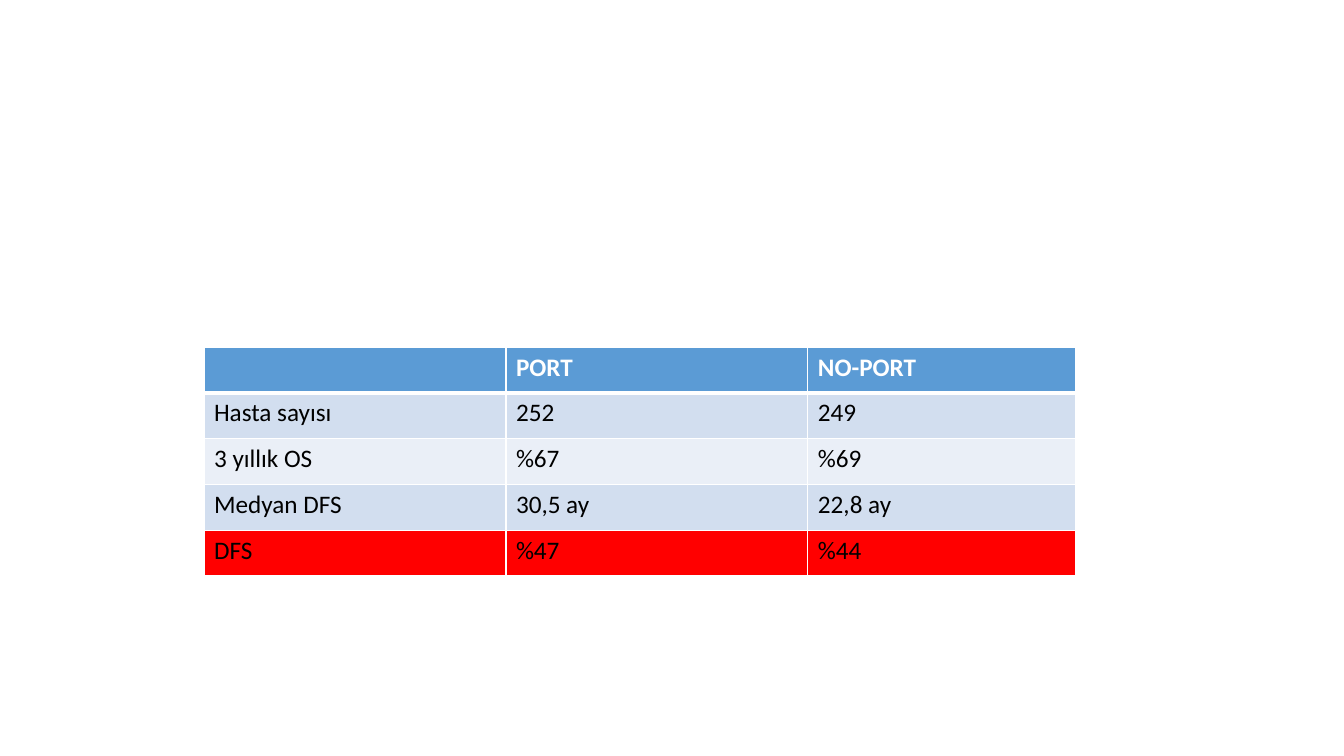
from dataclasses import dataclass

from lxml.etree import SubElement
from pptx import Presentation
from pptx.dml.color import RGBColor as Rgb
from pptx.oxml.ns import qn
from pptx.table import _Cell as Cell
from pptx.util import Emu, Pt

SCALE = 914400 / 100.8
WHITE, BLACK = "FFFFFF", "000000"
BLUE, PALE, LIGHT, RED = "5B9BD5", "D2DEEF", "EAEFF7", "FF0000"


@dataclass
class Row:
    texts: tuple[str, ...]
    fill: str
    ink: str = BLACK
    bold: bool = False
    top: int = 1
    base: int = 1


ROWS = [
    Row(("", "PORT", "NO-PORT"), BLUE, WHITE, True, base=3),
    Row(("Hasta sayısı", "252", "249"), PALE, top=3),
    Row(("3 yıllık OS", "%67", "%69"), LIGHT),
    Row(("Medyan DFS", "30,5 ay", "22,8 ay"), PALE),
    Row(("DFS", "%47", "%44"), RED),
]
WIDTHS = (302, 302, 268)


def px(size: int) -> Emu:
    return Emu(round(size * SCALE))


def color(code: str) -> Rgb:
    return Rgb.from_string(code)


def add_edge(cell: Cell, tag: str, width: int) -> None:
    props = cell._tc.get_or_add_tcPr()
    line = SubElement(props, qn(tag), w=str(Pt(width)))
    fill = SubElement(line, qn("a:solidFill"))
    SubElement(fill, qn("a:srgbClr"), val=WHITE)


def fill_cell(cell: Cell, text: str, row: Row) -> None:
    """Borders come first, as the schema puts them before the fill."""
    edges = {"a:lnL": 1, "a:lnR": 1, "a:lnT": row.top, "a:lnB": row.base}
    for tag, width in edges.items():
        add_edge(cell, tag, width)
    cell.fill.solid()
    cell.fill.fore_color.rgb = color(row.fill)
    if text:
        run = cell.text_frame.paragraphs[0].add_run()
        run.text = text
        font = run.font
        font.name, font.size, font.bold = "Calibri", Pt(18), row.bold
        font.color.rgb = color(row.ink)


def main() -> None:
    deck = Presentation()
    deck.slide_width, deck.slide_height = px(1344), px(756)
    slide = deck.slides.add_slide(deck.slide_layouts[6])
    table = slide.shapes.add_table(
        len(ROWS), len(WIDTHS), px(204), px(347), px(sum(WIDTHS)), px(229)
    ).table
    table.horz_banding = False
    for col, width in zip(table.columns, WIDTHS):
        col.width = px(width)
    for line, row in zip(table.rows, ROWS):
        for cell, text in zip(line.cells, row.texts):
            fill_cell(cell, text, row)
    deck.save("out.pptx")


if __name__ == "__main__":
    main()
